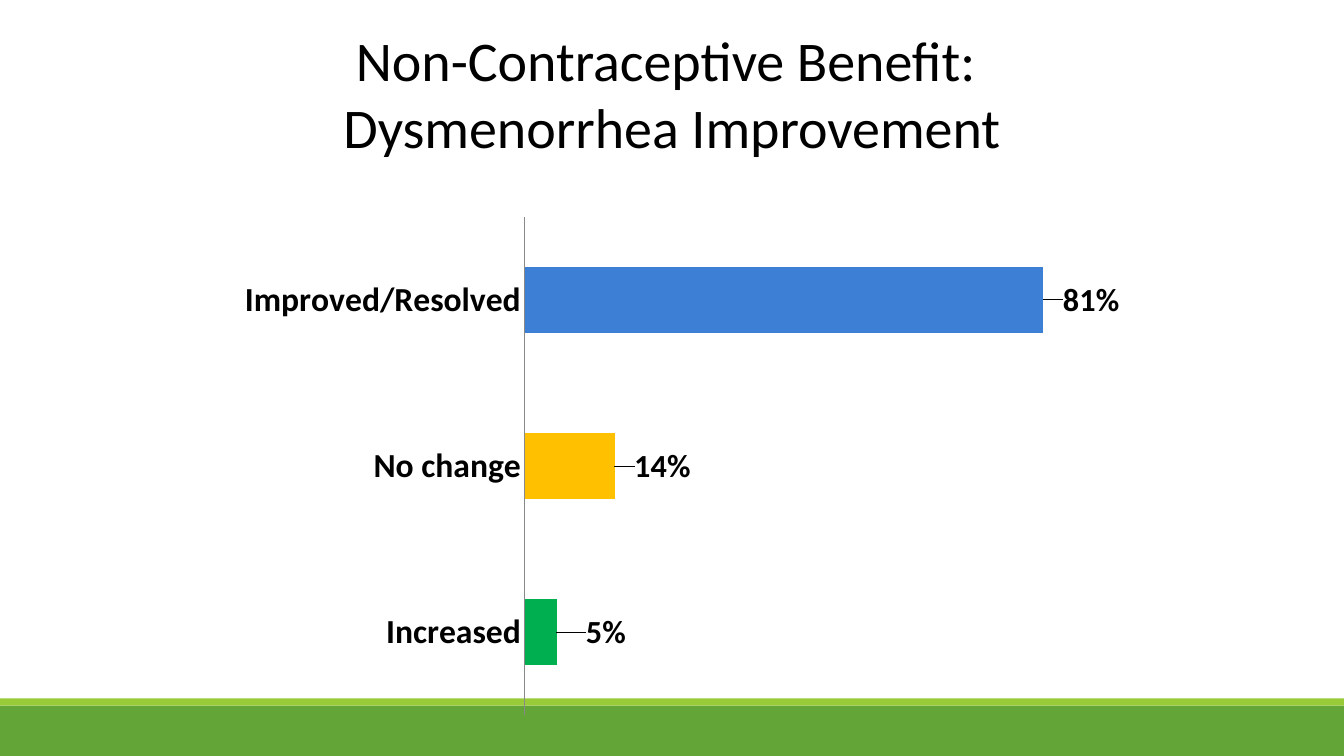
from dataclasses import dataclass

import pptx
import pptx.chart.data
import pptx.dml.color
import pptx.enum.chart
import pptx.enum.shapes
import pptx.enum.text
import pptx.oxml
import pptx.oxml.ns
import pptx.util

Inches = pptx.util.Inches
Pt = pptx.util.Pt
RGBColor = pptx.dml.color.RGBColor

BLACK = RGBColor(0x00, 0x00, 0x00)
AXIS_GRAY = RGBColor(0x89, 0x89, 0x89)
DARK_GREEN = RGBColor(0x63, 0xA5, 0x37)
LIGHT_GREEN = RGBColor(0x99, 0xCB, 0x38)
BLUE = RGBColor(0x3E, 0x7F, 0xD6)
AMBER = RGBColor(0xFF, 0xC0, 0x00)
GREEN = RGBColor(0x00, 0xB0, 0x50)

SLIDE_WIDTH = 13.33
SLIDE_HEIGHT = 7.5
CHART_NAMESPACE = pptx.oxml.ns.nsdecls("c")


@dataclass
class Band:
    top: float
    height: float
    color: RGBColor


@dataclass
class Outcome:
    name: str
    share: float
    color: RGBColor
    label_shift: float  # fraction of the chart width


BANDS = [Band(7, 0.5, DARK_GREEN), Band(6.93, 0.07, LIGHT_GREEN)]
OUTCOMES = [
    Outcome("Increased", 0.05, GREEN, 0.027),
    Outcome("No change", 0.14, AMBER, 0.017),
    Outcome("Improved/Resolved", 0.81, BLUE, 0.017),
]
PLOT_LAYOUT = {"x": 0.341, "y": 0.029, "w": 0.623, "h": 0.942}


def apply_format(target, values: dict) -> None:
    for name, value in values.items():
        setattr(target, name, value)


def format_font(font, size: float, bold: bool = False) -> None:
    apply_format(font, {"name": "Calibri", "size": Pt(size), "bold": bold})
    font.color.rgb = BLACK


def add_band(slide, band: Band) -> None:
    shape = slide.shapes.add_shape(
        pptx.enum.shapes.MSO_SHAPE.RECTANGLE,
        Inches(0), Inches(band.top), Inches(SLIDE_WIDTH), Inches(band.height))
    shape.shadow.inherit = False
    shape.fill.solid()
    shape.fill.fore_color.rgb = band.color
    shape.line.fill.background()


def add_title(slide, text: str) -> None:
    box = slide.shapes.add_textbox(Inches(1.75), Inches(0.17), Inches(9.83), Inches(1.5))
    apply_format(box.text_frame, {
        "word_wrap": True,
        "vertical_anchor": pptx.enum.text.MSO_ANCHOR.MIDDLE,
    })
    paragraph = box.text_frame.paragraphs[0]
    paragraph.text = text
    paragraph.alignment = pptx.enum.text.PP_ALIGN.CENTER
    for run in paragraph.runs:
        format_font(run.font, 40)


def make_layout(fractions: dict, inner: bool = False):
    """Build a manual chart layout from fractions of the chart size."""
    parts = '<c:layoutTarget val="inner"/>' if inner else ""
    if inner:
        parts += '<c:xMode val="edge"/><c:yMode val="edge"/>'
    parts += "".join(f'<c:{key} val="{value}"/>' for key, value in fractions.items())
    return pptx.oxml.parse_xml(
        f"<c:layout {CHART_NAMESPACE}><c:manualLayout>{parts}</c:manualLayout></c:layout>")


def format_axes(chart) -> None:
    tick_mark = pptx.enum.chart.XL_TICK_MARK
    category_axis = chart.category_axis
    apply_format(category_axis, {
        "major_tick_mark": tick_mark.NONE,
        "minor_tick_mark": tick_mark.NONE,
        "has_major_gridlines": False,
    })
    format_font(category_axis.tick_labels.font, 24, True)
    category_axis.format.line.color.rgb = AXIS_GRAY
    category_axis.format.line.width = Pt(0.75)
    apply_format(chart.value_axis, {
        "minimum_scale": 0,
        "maximum_scale": 0.9,
        "has_major_gridlines": False,
        "visible": False,
    })


def format_bars(plot) -> None:
    apply_format(plot, {"gap_width": 150, "overlap": -25, "vary_by_categories": False})
    series = plot.series[0]
    series.format.fill.solid()
    series.format.fill.fore_color.rgb = BLUE
    outside_end = pptx.enum.chart.XL_LABEL_POSITION.OUTSIDE_END
    for index, outcome in enumerate(OUTCOMES):
        point = series.points[index]
        point.format.fill.solid()
        point.format.fill.fore_color.rgb = outcome.color
        format_font(point.data_label.font, 23, True)
        point.data_label.position = outside_end
    labels = series.data_labels
    apply_format(labels, {
        "show_value": True,
        "number_format": "0%",
        "number_format_is_linked": False,
        "position": outside_end,
    })
    format_font(labels.font, 23, True)
    # Move each value label away from its bar
    label_elements = series.points[0].data_label.font and plot.series[0].data_labels
    for element, outcome in zip(label_elements._element.findall(pptx.oxml.ns.qn("c:dLbl")), OUTCOMES):
        element.insert(1, make_layout({"x": outcome.label_shift, "y": 0}))


def add_outcome_chart(slide) -> None:
    chart_data = pptx.chart.data.CategoryChartData(number_format="0%")
    chart_data.categories = [outcome.name for outcome in OUTCOMES]
    chart_data.add_series("Series 1", [outcome.share for outcome in OUTCOMES])
    chart = slide.shapes.add_chart(
        pptx.enum.chart.XL_CHART_TYPE.BAR_CLUSTERED,
        Inches(2.08), Inches(2), Inches(9.17), Inches(5.25), chart_data).chart
    apply_format(chart, {"has_legend": False, "has_title": False})
    format_font(chart.font, 18)
    format_axes(chart)
    format_bars(chart.plots[0])
    # Fix the plot area inside the chart
    plot_area = chart.plots[0]._element.getparent()
    for layout in plot_area.findall(pptx.oxml.ns.qn("c:layout")):
        plot_area.remove(layout)
    plot_area.insert(0, make_layout(PLOT_LAYOUT, inner=True))


def main() -> None:
    presentation = pptx.Presentation()
    apply_format(presentation, {
        "slide_width": Inches(SLIDE_WIDTH),
        "slide_height": Inches(SLIDE_HEIGHT),
    })
    slide = presentation.slides.add_slide(presentation.slide_layouts[6])
    # Footer bands
    for band in BANDS:
        add_band(slide, band)
    # Title and chart
    add_title(slide, "Non-Contraceptive Benefit: \nDysmenorrhea Improvement")
    add_outcome_chart(slide)
    presentation.save("out.pptx")


if __name__ == "__main__":
    main()
